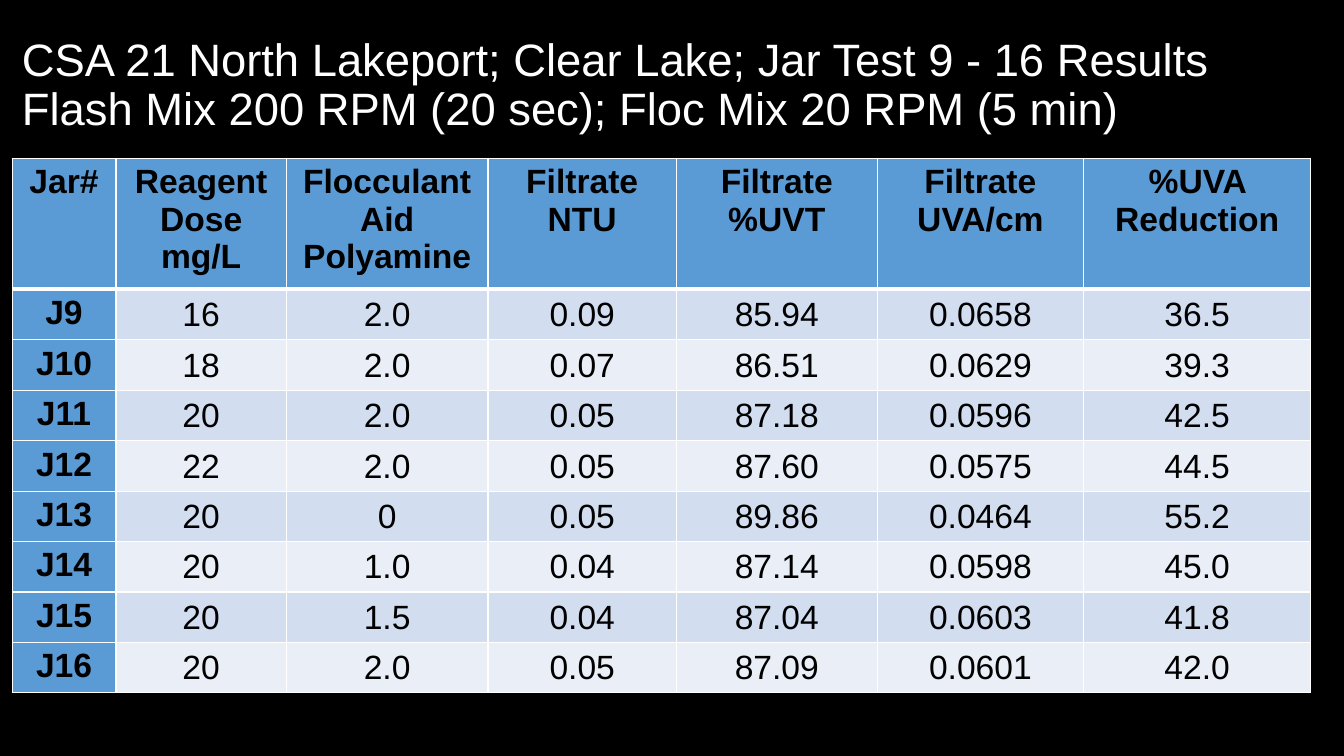
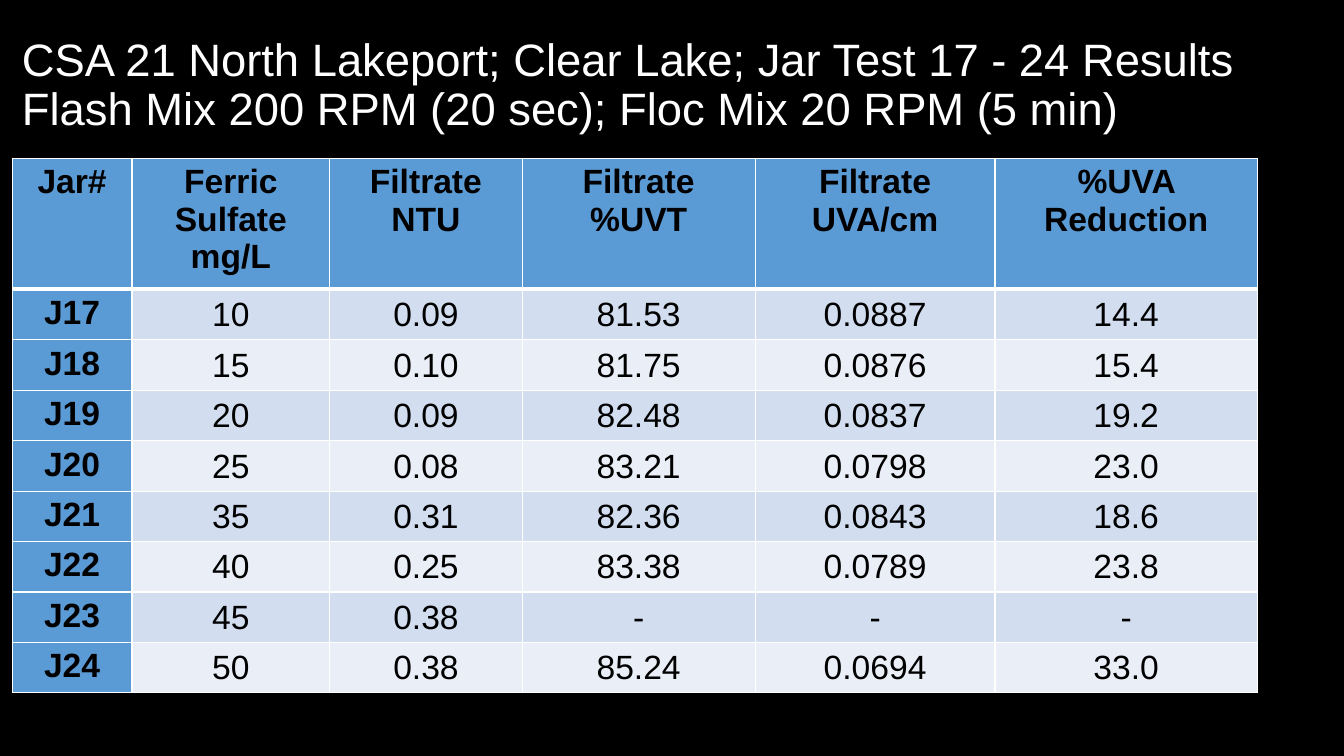
from dataclasses import dataclass

from lxml import etree
from pptx import Presentation
from pptx.dml.color import RGBColor
from pptx.enum.text import MSO_ANCHOR, PP_ALIGN
from pptx.oxml.ns import qn
from pptx.util import Inches, Pt

CENTER = PP_ALIGN.CENTER
TOP, MIDDLE = MSO_ANCHOR.TOP, MSO_ANCHOR.MIDDLE
BLANK_LAYOUT = 6


@dataclass(frozen=True)
class Theme:
    """Colours, type, spacing and line widths shared by all slides."""

    background: str = "000000"
    title: str = "FFFFFF"
    text: str = "000000"
    heading: str = "5B9BD5"
    bands: tuple = ("D2DEEF", "EAEFF7")
    border: str = "FFFFFF"
    font: str = "Arial"
    title_size: float = 32.4
    table_size: float = 24
    title_spacing: float = 0.9
    thin: int = 1
    thick: int = 3


THEME = Theme()
SLIDE_SIZE = (13.33, 7.5)
TITLE_BOX = (0.12, 0.13, 13.03, 1.45)
TABLE_ORIGIN = (0.12, 1.57)
HEADER_HEIGHT, ROW_HEIGHT = 1.21, 0.47
VALUE_INSET = 0.01

MIXING = "Flash Mix 200 RPM (20 sec); Floc Mix 20 RPM (5 min)"
FILTRATE_HEADERS = ["Filtrate\nNTU", "Filtrate\n%UVT", "Filtrate\nUVA/cm", "%UVA Reduction"]

JAR_TESTS = [
    {
        "jars": (9, 16),
        "widths": [1.03, 1.69, 2, 1.87, 1.99, 2.05, 2.25],
        "doses": ["Reagent\nDose\nmg/L", "Flocculant Aid\nPolyamine"],
        "results": [
            ["16", "2.0", "0.09", "85.94", "0.0658", "36.5"],
            ["18", "2.0", "0.07", "86.51", "0.0629", "39.3"],
            ["20", "2.0", "0.05", "87.18", "0.0596", "42.5"],
            ["22", "2.0", "0.05", "87.60", "0.0575", "44.5"],
            ["20", "0", "0.05", "89.86", "0.0464", "55.2"],
            ["20", "1.0", "0.04", "87.14", "0.0598", "45.0"],
            ["20", "1.5", "0.04", "87.04", "0.0603", "41.8"],
            ["20", "2.0", "0.05", "87.09", "0.0601", "42.0"],
        ],
    },
    {
        "jars": (17, 24),
        "widths": [1.19, 1.96, 1.91, 2.31, 2.38, 2.6],
        "doses": ["Ferric\nSulfate\nmg/L"],
        "results": [
            ["10", "0.09", "81.53", "0.0887", "14.4"],
            ["15", "0.10", "81.75", "0.0876", "15.4"],
            ["20", "0.09", "82.48", "0.0837", "19.2"],
            ["25", "0.08", "83.21", "0.0798", "23.0"],
            ["35", "0.31", "82.36", "0.0843", "18.6"],
            ["40", "0.25", "83.38", "0.0789", "23.8"],
            ["45", "0.38", "-", "-", "-"],
            ["50", "0.38", "85.24", "0.0694", "33.0"],
        ],
    },
]


def style_runs(paragraph, size, color, bold=False):
    """Give every run of a paragraph the theme font."""
    for run in paragraph.runs:
        run.font.name = THEME.font
        run.font.size = Pt(size)
        run.font.bold = bold
        run.font.color.rgb = RGBColor.from_string(color)


def add_title(slide, box, text):
    """Place the title, centred vertically in its box."""
    frame = slide.shapes.add_textbox(*map(Inches, box)).text_frame
    frame.word_wrap = True
    frame.vertical_anchor = MIDDLE
    frame.text = text
    for paragraph in frame.paragraphs:
        paragraph.line_spacing = THEME.title_spacing
        style_runs(paragraph, THEME.title_size, THEME.title)


def add_borders(cell, top, bottom):
    """Draw the four cell edges, with their own top and bottom widths."""
    properties = cell._tc.get_or_add_tcPr()
    edges = {"a:lnL": THEME.thin, "a:lnR": THEME.thin, "a:lnT": top, "a:lnB": bottom}
    for tag, width in edges.items():
        line = etree.SubElement(properties, qn(tag), w=str(Pt(width)))
        fill = etree.SubElement(line, qn("a:solidFill"))
        etree.SubElement(fill, qn("a:srgbClr"), val=THEME.border)


def style_cell(cell, row, column):
    """Format a cell as a heading or as a banded value."""
    is_heading = row == 0 or column == 0
    add_borders(
        cell,
        top=THEME.thick if row == 1 else THEME.thin,
        bottom=THEME.thick if row == 0 else THEME.thin,
    )
    cell.fill.solid()
    fill = THEME.heading if is_heading else THEME.bands[(row - 1) % 2]
    cell.fill.fore_color.rgb = RGBColor.from_string(fill)
    cell.vertical_anchor = TOP if is_heading else MIDDLE
    if not is_heading:
        cell.margin_left = cell.margin_right = cell.margin_top = Inches(VALUE_INSET)
        cell.margin_bottom = 0
    for paragraph in cell.text_frame.paragraphs:
        paragraph.alignment = CENTER
        style_runs(paragraph, THEME.table_size, THEME.text, is_heading)


def add_results_table(slide, origin, widths, rows):
    """Place the jar results, with headings in the first row and column."""
    heights = [HEADER_HEIGHT] + [ROW_HEIGHT] * (len(rows) - 1)
    box = (*origin, sum(widths), sum(heights))
    results = slide.shapes.add_table(len(rows), len(widths), *map(Inches, box)).table
    results.first_col = True
    for column, width in zip(results.columns, widths):
        column.width = Inches(width)
    for row, height in zip(results.rows, heights):
        row.height = Inches(height)
    for row_index, values in enumerate(rows):
        for column_index, value in enumerate(values):
            cell = results.cell(row_index, column_index)
            cell.text_frame.text = value
            style_cell(cell, row_index, column_index)


def add_jar_test_slide(deck, jar_test):
    """Add one slide with the title and results of a jar test."""
    slide = deck.slides.add_slide(deck.slide_layouts[BLANK_LAYOUT])
    first, last = jar_test["jars"]
    heading = f"CSA 21 North Lakeport; Clear Lake; Jar Test {first} - {last} Results"
    add_title(slide, TITLE_BOX, f"{heading}\v{MIXING}")
    rows = [["Jar#"] + jar_test["doses"] + FILTRATE_HEADERS]
    rows += [[f"J{jar}"] + values for jar, values in enumerate(jar_test["results"], first)]
    add_results_table(slide, TABLE_ORIGIN, jar_test["widths"], rows)


def main():
    """Build and save the deck."""
    deck = Presentation()
    deck.slide_width, deck.slide_height = map(Inches, SLIDE_SIZE)
    backdrop = deck.slide_master.background.fill
    backdrop.solid()
    backdrop.fore_color.rgb = RGBColor.from_string(THEME.background)
    for jar_test in JAR_TESTS:
        add_jar_test_slide(deck, jar_test)
    deck.save("out.pptx")


if __name__ == "__main__":
    main()
